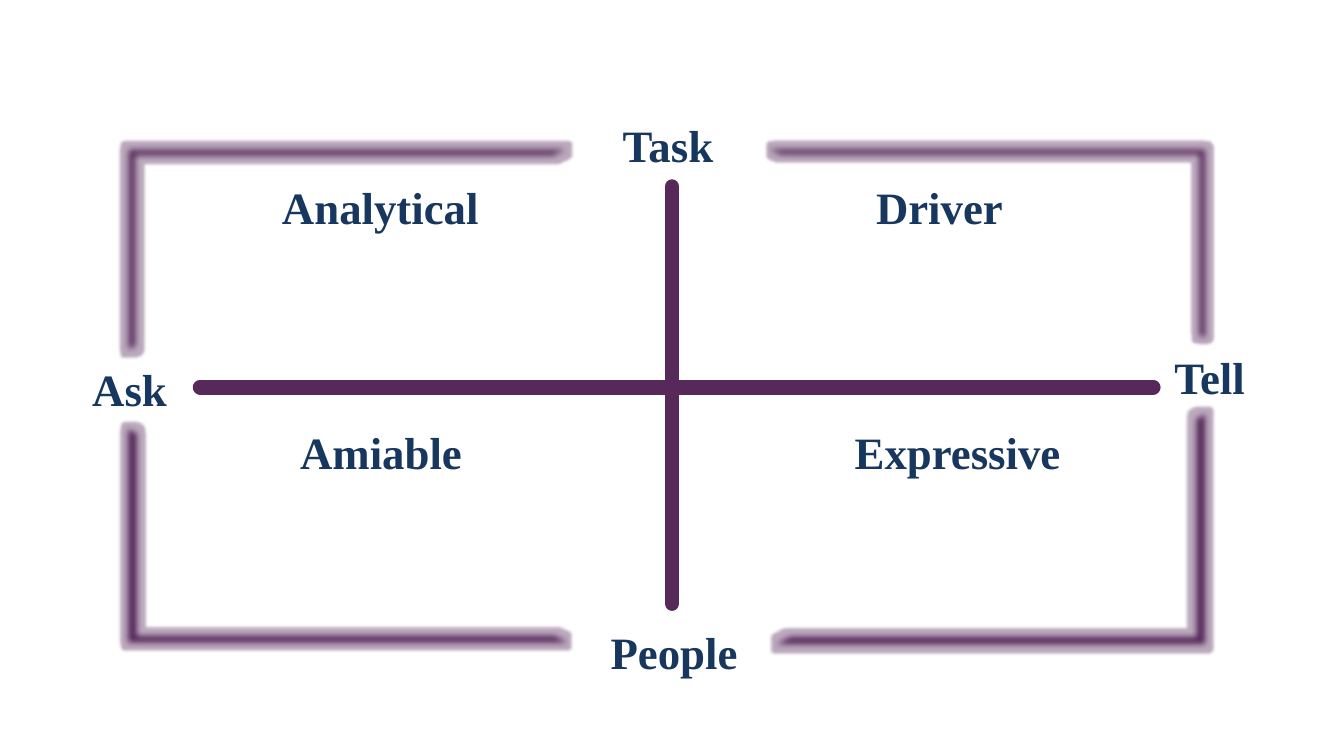
from dataclasses import dataclass

from lxml import etree
from pptx import Presentation
from pptx import util as u
from pptx.dml.color import RGBColor
from pptx.enum import shapes, text
from pptx.oxml.ns import qn
from pptx.slide import Slide


@dataclass(frozen=True)
class Theme:
    plum: RGBColor = RGBColor.from_string("56295A")
    edge: RGBColor = RGBColor.from_string("534239")
    navy: RGBColor = RGBColor.from_string("17375E")
    font: str = "Times New Roman"
    label_size: u.Pt = u.Pt(24)
    axis_width: u.Pt = u.Pt(8)
    glow: u.Pt = u.Pt(3)
    soft_edge: u.Pt = u.Pt(3.5)


@dataclass(frozen=True)
class Axis:
    x1: float
    y1: float
    x2: float
    y2: float


@dataclass(frozen=True)
class Label:
    words: str
    left: float
    top: float
    width: float
    align: text.PP_ALIGN = text.PP_ALIGN.CENTER


@dataclass(frozen=True)
class Corner:
    left: float
    top: float
    width: float
    height: float
    flip: str = ""
    rotation: int = 0


THEME = Theme()
SLIDE_WIDTH = 10
SLIDE_HEIGHT = SLIDE_WIDTH * 9 / 16
LABEL_HEIGHT = 0.5
UPPER_ROW, LOWER_ROW = 1.29, 3.11

AXES = [Axis(1.49, 2.88, 8.58, 2.88), Axis(5, 1.39, 5, 4.49)]
AXIS_LABELS = [
    Label("Task", 4.22, 0.83, 1.5),
    Label("People", 4.14, 4.6, 1.75),
    Label("Ask", 0.5, 2.64, 0.84, text.PP_ALIGN.RIGHT),
    Label("Tell", 8.25, 2.55, 1.5),
]
CORNERS = [
    Corner(0.92, 1.07, 3.5, 1.6),
    Corner(5.58, 3, 3.42, 1.83, rotation=180),
    Corner(5.5, 1.07, 3.5, 1.51, flip="flipH"),
    Corner(0.92, 3.12, 3.5, 1.69, flip="flipV"),
]
STYLE_LABELS = [
    Label("Driver", 6.24, UPPER_ROW, 1.5),
    Label("Analytical", 1.75, UPPER_ROW, 2.16),
    Label("Expressive", 6, LOWER_ROW, 2.25),
    Label("Amiable", 1.92, LOWER_ROW, 1.83),
]


def draw_axis(page: Slide, axis: Axis) -> None:
    line = page.shapes.add_connector(
        shapes.MSO_CONNECTOR.STRAIGHT,
        u.Inches(axis.x1), u.Inches(axis.y1), u.Inches(axis.x2), u.Inches(axis.y2),
    )
    line.line.color.rgb = THEME.plum
    line.line.width = THEME.axis_width
    line.line._get_or_add_ln().set("cap", "rnd")
    etree.SubElement(line._element.spPr, qn("a:effectLst"))


def draw_label(page: Slide, label: Label) -> None:
    box = page.shapes.add_textbox(
        u.Inches(label.left), u.Inches(label.top),
        u.Inches(label.width), u.Inches(LABEL_HEIGHT),
    )
    frame = box.text_frame
    frame.word_wrap = True
    frame.auto_size = text.MSO_AUTO_SIZE.SHAPE_TO_FIT_TEXT
    para = frame.paragraphs[0]
    para.text = label.words
    para.alignment = label.align
    para.font.name = THEME.font
    para.font.size = THEME.label_size
    para.font.bold = True
    para.font.color.rgb = THEME.navy


def draw_corner(page: Slide, corner: Corner) -> None:
    """Draw a half frame with a translucent glow and softened edges."""
    frame = page.shapes.add_shape(
        shapes.MSO_SHAPE.HALF_FRAME,
        u.Inches(corner.left), u.Inches(corner.top),
        u.Inches(corner.width), u.Inches(corner.height),
    )
    frame.adjustments[0], frame.adjustments[1] = 0.076, 0.08
    frame.rotation = corner.rotation
    if corner.flip:
        frame._element.spPr.find(qn("a:xfrm")).set(corner.flip, "1")
    frame.fill.solid()
    frame.fill.fore_color.rgb = THEME.plum
    frame.line.color.rgb = THEME.edge
    frame.line.width = u.Pt(0)
    frame.shadow.inherit = False
    effects = frame._element.spPr.find(qn("a:effectLst"))
    glow = etree.SubElement(effects, qn("a:glow"), rad=str(THEME.glow))
    color = etree.SubElement(glow, qn("a:srgbClr"), val=str(THEME.plum))
    etree.SubElement(color, qn("a:alpha"), val="40000")
    etree.SubElement(effects, qn("a:softEdge"), rad=str(THEME.soft_edge))


def main() -> None:
    deck = Presentation()
    deck.slide_width = u.Inches(SLIDE_WIDTH)
    deck.slide_height = u.Inches(SLIDE_HEIGHT)
    page = deck.slides.add_slide(deck.slide_layouts.get_by_name("Blank"))
    for axis in AXES:
        draw_axis(page, axis)
    for label in AXIS_LABELS:
        draw_label(page, label)
    for corner in CORNERS:
        draw_corner(page, corner)
    for label in STYLE_LABELS:
        draw_label(page, label)
    deck.save("out.pptx")


if __name__ == "__main__":
    main()
